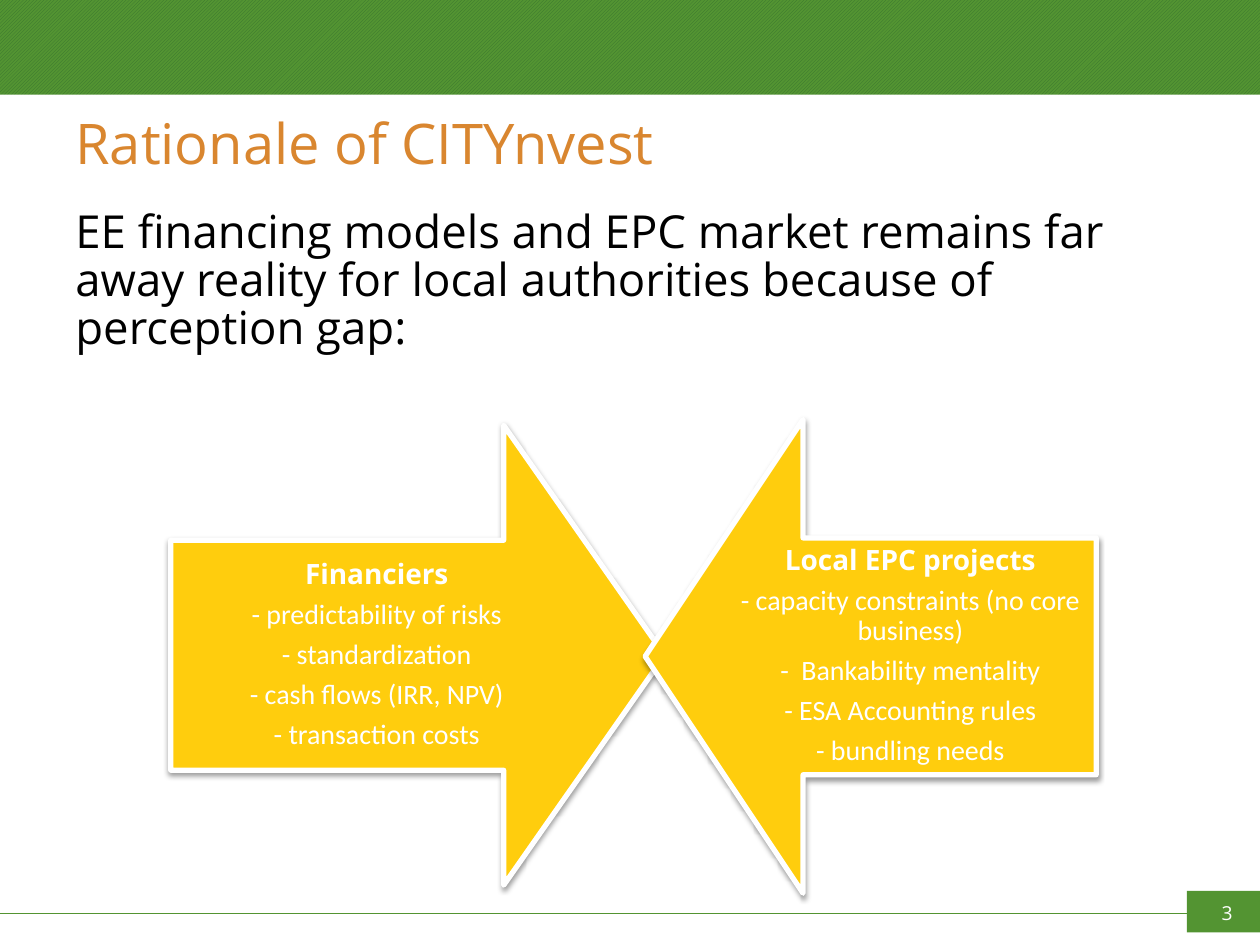
from lxml import etree
from pptx import Presentation, util as u
from pptx.dml.color import RGBColor
from pptx.enum import dml, shapes, text
from pptx.oxml import parse_xml
from pptx.oxml.ns import nsdecls, qn

GREEN = RGBColor(0x53, 0x94, 0x32)
DARK_GREEN = RGBColor(0x35, 0x70, 0x2E)
ORANGE = RGBColor(0xD9, 0x86, 0x2F)
YELLOW = RGBColor(0xFF, 0xCD, 0x0D)
WHITE = RGBColor(0xFF, 0xFF, 0xFF)
BLACK = RGBColor(0, 0, 0)

SHADOW = (
    f'<a:effectLst {nsdecls("a")}><a:outerShdw blurRad="39370" dist="20320" '
    'dir="5400000" rotWithShape="0"><a:srgbClr val="000000">'
    '<a:alpha val="38000"/></a:srgbClr></a:outerShdw></a:effectLst>'
)

prs = Presentation()
prs.slide_width, prs.slide_height = u.Inches(10), u.Inches(7.5)
slide = prs.slides.add_slide(prs.slide_layouts[6])
margin = 0.5
content_width = 10 - 2 * margin
band_height = 0.75


def add_block(kind, box, color):
    block = slide.shapes.add_shape(kind, *map(u.Inches, box))
    block.shadow.inherit = False
    block.fill.solid()
    block.fill.fore_color.rgb = color
    block.line.fill.background()
    return block


def add_text(box, lines, align, anchor, inset=None):
    """Each line is (words, size, font, color, bold)."""
    frame = slide.shapes.add_textbox(*map(u.Inches, box)).text_frame
    frame.word_wrap = True
    frame.vertical_anchor = anchor
    if inset:
        frame.margin_left = frame.margin_right = u.Inches(inset)
        frame.margin_top = frame.margin_bottom = u.Inches(inset)
    for i, (words, size, font, color, bold) in enumerate(lines):
        paragraph = frame.add_paragraph() if i else frame.paragraphs[0]
        paragraph.alignment = align
        run = paragraph.add_run()
        run.text = words
        run.font.size, run.font.name = u.Pt(size), font
        run.font.color.rgb, run.font.bold = color, bold
    return frame


# Header band and white page
band = add_block(shapes.MSO_SHAPE.RECTANGLE, (0, 0, 10, 7.05), GREEN)
band.fill.patterned()
band.fill.pattern = dml.MSO_PATTERN.LIGHT_UPWARD_DIAGONAL
band.fill.fore_color.rgb = DARK_GREEN
band.fill.back_color.rgb = GREEN
add_block(shapes.MSO_SHAPE.RECTANGLE, (0, band_height, 10, 7.5 - band_height), WHITE)

# Footer rule and page number
rule = slide.shapes.add_connector(
    shapes.MSO_CONNECTOR.STRAIGHT, u.Inches(10), u.Inches(7.25), 0, u.Inches(7.25))
rule.line.color.rgb = GREEN
rule.line.width = u.Pt(0.75)
etree.SubElement(rule._element.spPr, qn("a:effectLst"))
add_block(shapes.MSO_SHAPE.RECTANGLE, (9.42, 7.07, 0.58, 0.33), GREEN)
add_text((9.45, 7.1, 0.58, 0.32), [("3", 11, "Open Sans", WHITE, False)],
         text.PP_ALIGN.CENTER, text.MSO_ANCHOR.TOP)

# Title and statement
add_text((margin, band_height, content_width, 0.75),
         [("Rationale of CITYnvest", 32, "Open Sans", ORANGE, False)],
         text.PP_ALIGN.LEFT, text.MSO_ANCHOR.MIDDLE)
statement = add_text(
    (margin, 1.58, content_width, 5.42),
    [("EE financing models and EPC market remains far away reality for local "
      "authorities because of perception gap:", 26, "Open Sans", BLACK, False)],
    text.PP_ALIGN.LEFT, text.MSO_ANCHOR.TOP)
statement.margin_top = u.Inches(0.09)
statement.paragraphs[0].line_spacing = 0.88

# Opposing arrows: frame before rotation, rotation, text area, heading, points
sides = [
    ((1.49, 3.24, 3.65, 3.92), 270, (1.35, 4.29, 3.28, 1.82), "Financiers",
     ["- predictability of risks", "- standardization",
      "- cash flows (IRR, NPV)", "- transaction costs"]),
    ((5.03, 3.42, 3.76, 3.58), 90, (5.75, 4.27, 2.95, 1.88), "Local EPC projects",
     ["- capacity constraints (no core business)", "-  Bankability mentality",
      "- ESA Accounting rules", "- bundling needs"]),
]
for arrow_box, rotation, label_box, heading, points in sides:
    arrow = add_block(shapes.MSO_SHAPE.DOWN_ARROW, arrow_box, YELLOW)
    arrow.rotation = rotation
    arrow.adjustments[0], arrow.adjustments[1] = 0.5, 0.35
    arrow.line.color.rgb = WHITE
    arrow.line.width = u.Pt(3)
    properties = arrow._element.spPr
    properties.replace(properties.find(qn("a:effectLst")), parse_xml(SHADOW))

    lines = [(heading, 16, "Open Sans", WHITE, True)]
    lines += [(point, 16, "Calibri", WHITE, False) for point in points]
    label = add_text(label_box, lines, text.PP_ALIGN.CENTER,
                     text.MSO_ANCHOR.MIDDLE, 0.12)
    for paragraph in label.paragraphs:
        paragraph.line_spacing = 0.9
        paragraph.space_after = u.Pt(5.6)

prs.save("out.pptx")
